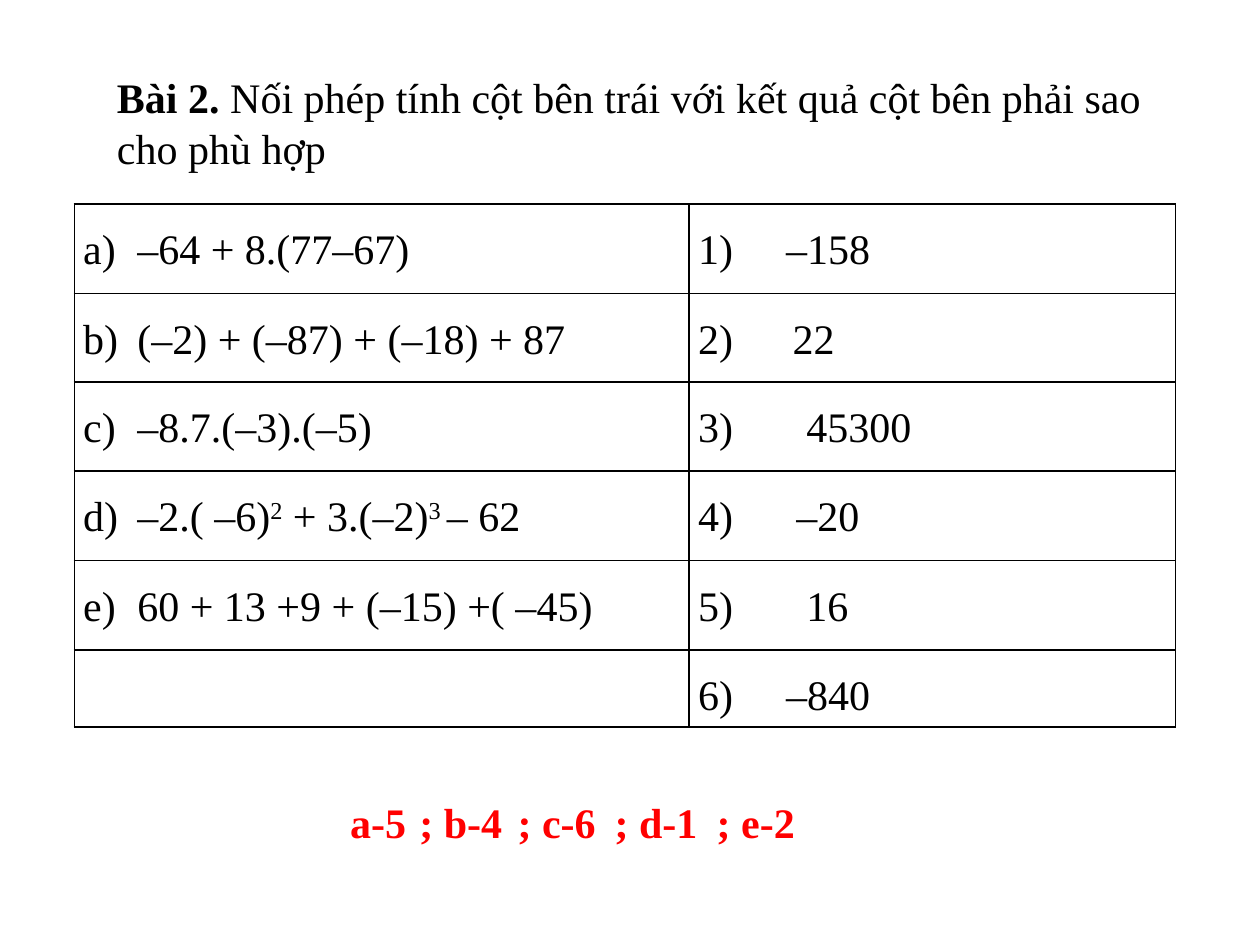
from lxml import etree
from pptx import Presentation, util as u
from pptx.dml.color import RGBColor
from pptx.enum import text
from pptx.oxml import ns

BLACK = RGBColor(0x00, 0x00, 0x00)
RED = RGBColor(0xFF, 0x00, 0x00)


class Worksheet:
    """Holds the text style and the page being filled."""
    font_name = "Times New Roman"
    font_size = u.Pt(24)
    border = u.Pt(1)

    def __init__(self, page):
        self.page = page

    def span(self, para, words, color=BLACK, bold=False, raised=False):
        span = para.add_run()
        span.text = words
        font = span.font
        font.name, font.size, font.bold = self.font_name, self.font_size, bold
        font.color.rgb = color
        if raised:
            font._element.set("baseline", "30000")

    def box(self, left, top, width, height, lines, color=BLACK, align=None):
        """Text box; each line is a list of (words, bold)."""
        box = self.page.shapes.add_textbox(*map(u.Inches, (left, top, width, height)))
        frame = box.text_frame
        frame.word_wrap = False
        frame.auto_size = text.MSO_AUTO_SIZE.SHAPE_TO_FIT_TEXT
        for number, line in enumerate(lines):
            para = frame.add_paragraph() if number else frame.paragraphs[0]
            para.alignment = align
            for words, bold in line:
                self.span(para, words, color, bold)

    def table(self, left, top, widths, heights):
        table = self.page.shapes.add_table(
            len(heights), len(widths), u.Inches(left), u.Inches(top),
            u.Inches(sum(widths)), u.Inches(sum(heights))).table
        table.first_row = table.horz_banding = False
        for column, width in zip(table.columns, widths):
            column.width = u.Inches(width)
        for row, height in zip(table.rows, heights):
            row.height = u.Inches(height)
        for cell in table.iter_cells():
            cell.margin_left = cell.margin_right = u.Inches(0.07)
            cell.margin_top = cell.margin_bottom = 0
            self.outline(cell)
            cell.fill.background()
        return table

    def outline(self, cell):
        props = cell._tc.get_or_add_tcPr()
        for side in ("a:lnL", "a:lnR", "a:lnT", "a:lnB"):
            line = etree.SubElement(props, ns.qn(side), w=str(int(self.border)))
            fill = etree.SubElement(line, ns.qn("a:solidFill"))
            etree.SubElement(fill, ns.qn("a:srgbClr"), val=str(BLACK))

    def entry(self, cell, label, spans, indent):
        """Label, then (words, raised) spans starting at a hanging indent."""
        para = cell.text_frame.paragraphs[0]
        para.line_spacing = 1.5
        props = para._p.get_or_add_pPr()
        props.set("marL", str(u.Inches(indent)))
        props.set("indent", str(-u.Inches(indent)))
        self.span(para, f"{label})\t")
        for words, raised in spans:
            self.span(para, words, raised=raised)


def main():
    deck = Presentation()
    deck.slide_width, deck.slide_height = u.Inches(10), u.Inches(7.5)
    sheet = Worksheet(deck.slides.add_slide(deck.slide_layouts[6]))

    # Task
    sheet.box(0.83, 0.52, 8.49, 0.91, [
        [("Bài 2. ", True),
         ("Nối phép tính cột bên trái với kết quả cột bên phải sao ", False)],
        [("cho phù hợp", False)],
    ], align=text.PP_ALIGN.JUSTIFY)

    # Expressions on the left, results with their indents on the right
    expressions = [
        [("–64 + 8.(77–67)", False)],
        [("(–2) + (–87) + (–18) + 87", False)],
        [("–8.7.(–3).(–5)", False)],
        [("–2.( –6)", False), ("2", True), (" + 3.(–2)", False),
         ("3 ", True), ("– 62", False)],
        [("60 + 13 +9 + (–15) +( –45)", False)],
    ]
    results = [("–158", 0.7), ("22", 0.75), ("45300", 0.86),
               ("–20", 0.78), ("16", 0.86), ("–840", 0.7)]
    table = sheet.table(0.59, 1.62, [4.88, 3.86],
                        [0.71, 0.7, 0.71, 0.71, 0.71, 0.61])
    for row, (letter, spans) in enumerate(zip("abcde", expressions)):
        sheet.entry(table.cell(row, 0), letter, spans, 0.43)
    for row, (value, indent) in enumerate(results):
        sheet.entry(table.cell(row, 1), row + 1, [(value, False)], indent)

    # Matching pairs
    pairs = [("a-5", 2.68, 0.65), ("; b-4", 3.23, 0.87), ("; c-6", 4.01, 0.83),
             ("; d-1", 4.78, 0.87), ("; e-2", 5.59, 0.83)]
    for words, left, width in pairs:
        sheet.box(left, 6.27, width, 0.5, [[(words, True)]], RED)

    deck.save("out.pptx")


if __name__ == "__main__":
    main()
